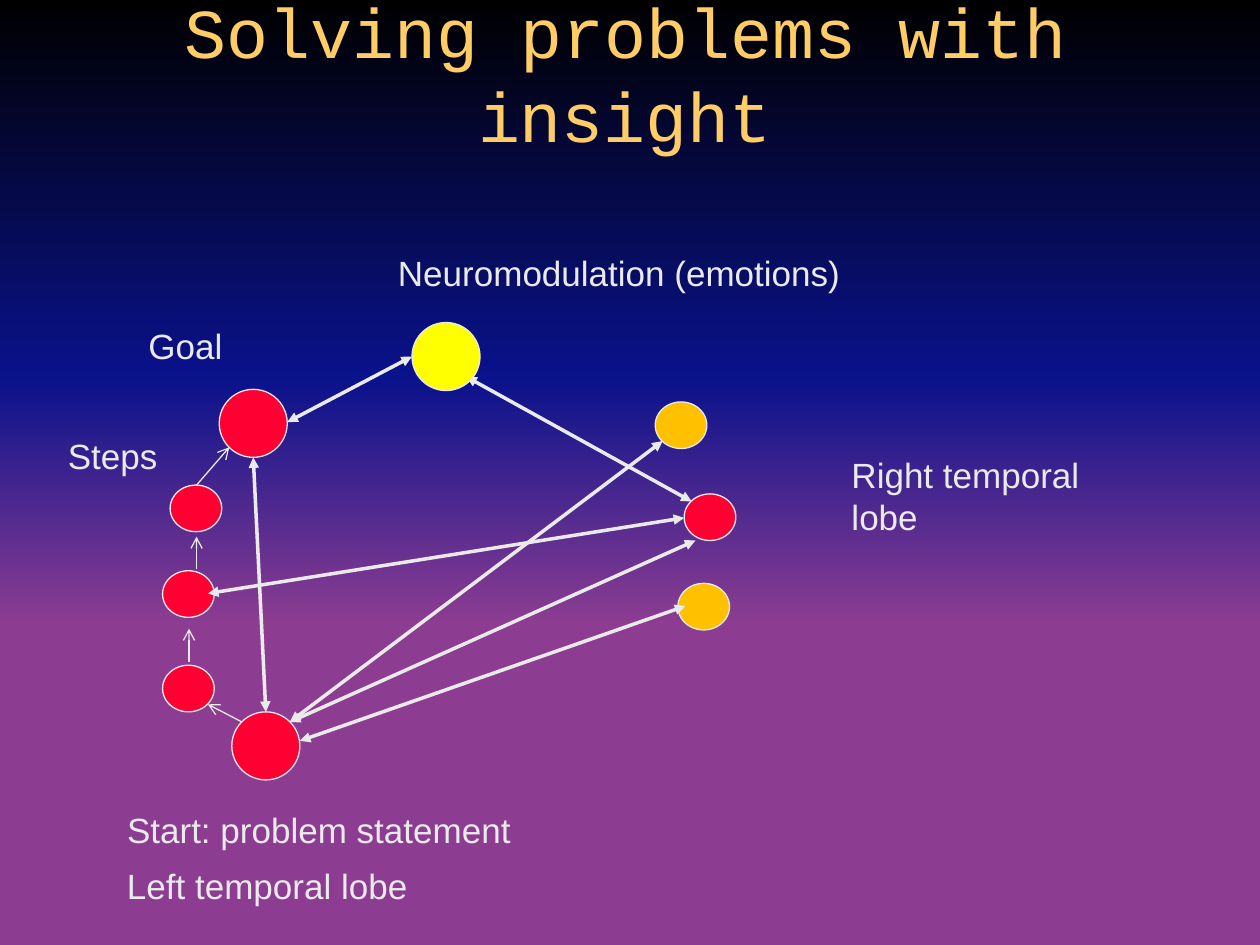
from lxml.etree import SubElement
from pptx import Presentation
from pptx.dml.color import RGBColor
from pptx.enum.shapes import MSO_CONNECTOR, MSO_SHAPE
from pptx.enum.text import MSO_ANCHOR, MSO_AUTO_SIZE, PP_ALIGN
from pptx.oxml import parse_xml
from pptx.oxml.ns import nsdecls, qn
from pptx.util import Inches, Pt

RED = RGBColor(0xFF, 0x00, 0x33)
ORANGE = RGBColor(0xFF, 0xC0, 0x00)
YELLOW = RGBColor(0xFF, 0xFF, 0x00)
PALE = RGBColor(0xEA, 0xEA, 0xEA)
GOLD = RGBColor(0xFF, 0xCC, 0x66)
BLACK = RGBColor(0x00, 0x00, 0x00)
BLUE = RGBColor(0x0A, 0x12, 0x8C)
PURPLE = RGBColor(0x8C, 0x3D, 0x91)

BIG = (0.54, 0.54)
SMALL = (0.41, 0.37)


class Diagram:
    title_font = "Courier New"
    body_font = "Arial"

    def __init__(self, slide):
        self.s = slide

    def background(self, stops):
        fill = self.s.background.fill
        fill.gradient()
        fill.gradient_angle = 270
        gs_list = next(self.s.element.iter(qn("a:gsLst")))
        for gs in list(gs_list):
            gs_list.remove(gs)
        for percent, color in stops:
            gs = SubElement(gs_list, qn("a:gs"), pos=str(percent * 1000))
            SubElement(gs, qn("a:srgbClr"), val=str(color))

    def title(self, text, x, y, w, h):
        sp = self.s.shapes.title
        sp.left, sp.top, sp.width, sp.height = map(Inches, (x, y, w, h))
        tf = sp.text_frame
        tf.word_wrap = True
        tf.auto_size = MSO_AUTO_SIZE.NONE
        tf.vertical_anchor = MSO_ANCHOR.MIDDLE
        p = tf.paragraphs[0]
        p.alignment = PP_ALIGN.CENTER
        r = p.add_run()
        r.text = text
        r.font.size = Pt(40)
        r.font.name = self.title_font
        r.font.color.rgb = GOLD
        r.font.fill._xPr.find(qn("a:solidFill")).addnext(parse_xml(
            f'<a:effectLst {nsdecls("a")}><a:outerShdw dist="35921" dir="2700000">'
            '<a:srgbClr val="000000"/></a:outerShdw></a:effectLst>'))

    def label(self, lines, x, y, w, h=0.44):
        tf = self.s.shapes.add_textbox(*map(Inches, (x, y, w, h))).text_frame
        tf.word_wrap = True
        tf.auto_size = MSO_AUTO_SIZE.SHAPE_TO_FIT_TEXT
        tf.text = lines
        for p in tf.paragraphs:
            p.font.size = Pt(20)
            p.font.name = self.body_font
            p.font.color.rgb = PALE

    def node(self, x, y, size, color):
        sp = self.s.shapes.add_shape(MSO_SHAPE.OVAL, *map(Inches, (x, y, *size)))
        sp.shadow.inherit = False
        sp.fill.solid()
        sp.fill.fore_color.rgb = color
        sp.line.color.rgb = PALE
        sp.line.width = Pt(0.75)

    def arrow(self, start, end, width, **ends):
        cn = self.s.shapes.add_connector(
            MSO_CONNECTOR.STRAIGHT, *map(Inches, (*start, *end)))
        cn.line.color.rgb = PALE
        cn.line.width = Pt(width)
        for tag, kind in ends.items():
            SubElement(cn.line._get_or_add_ln(), qn(f"a:{tag}"), type=kind)
        SubElement(cn.element.spPr, qn("a:effectLst"))

    def step(self, start, end):
        self.arrow(start, end, 0.75, tailEnd="arrow")

    def link(self, start, end):
        self.arrow(start, end, 2, headEnd="triangle", tailEnd="triangle")


def main():
    prs = Presentation()
    prs.slide_width, prs.slide_height = Inches(10), Inches(7.5)
    d = Diagram(prs.slides.add_slide(prs.slide_layouts[5]))
    d.background([(0, BLACK), (40, BLUE), (66, PURPLE), (100, PURPLE)])
    d.title("Solving problems with insight", 1.06, 0.21, 7.8, 0.73)

    for x, y, size, color in [
        (1.84, 5.65, BIG, RED),
        (1.29, 5.28, SMALL, RED),
        (1.74, 3.09, BIG, RED),
        (1.29, 4.53, SMALL, RED),
        (1.35, 3.85, SMALL, RED),
        (5.38, 4.63, SMALL, ORANGE),
        (5.43, 3.92, SMALL, RED),
        (5.2, 3.19, SMALL, ORANGE),
    ]:
        d.node(x, y, size, color)

    for start, end in [
        ((1.92, 5.73), (1.65, 5.59)),
        ((1.5, 5.25), (1.5, 4.99)),
        ((1.56, 4.52), (1.56, 4.26)),
        ((1.56, 3.85), (1.82, 3.55)),
    ]:
        d.step(start, end)

    for start, end in [
        ((2.38, 5.88), (5.44, 4.81)),
        ((2.3, 5.73), (5.52, 4.29)),
        ((2.3, 5.73), (5.26, 3.5)),
        ((1.65, 4.71), (5.43, 4.11)),
        ((2.01, 3.63), (2.11, 5.65)),
        ((3.7, 2.99), (5.49, 3.98)),
        ((2.28, 3.35), (3.27, 2.83)),
    ]:
        d.link(start, end)

    d.node(3.27, 2.56, BIG, YELLOW)

    d.label("Right temporal\nlobe", 6.66, 3.55, 2.76, 0.77)
    d.label("Left temporal lobe", 0.91, 6.81, 2.63)
    d.label("Start: problem statement", 0.91, 6.37, 3.38)
    d.label("Goal", 1.08, 2.53, 0.95)
    d.label("Steps", 0.44, 3.4, 0.95)
    d.label("Neuromodulation (emotions)", 3.06, 1.95, 4.19)

    prs.save("out.pptx")


if __name__ == "__main__":
    main()
